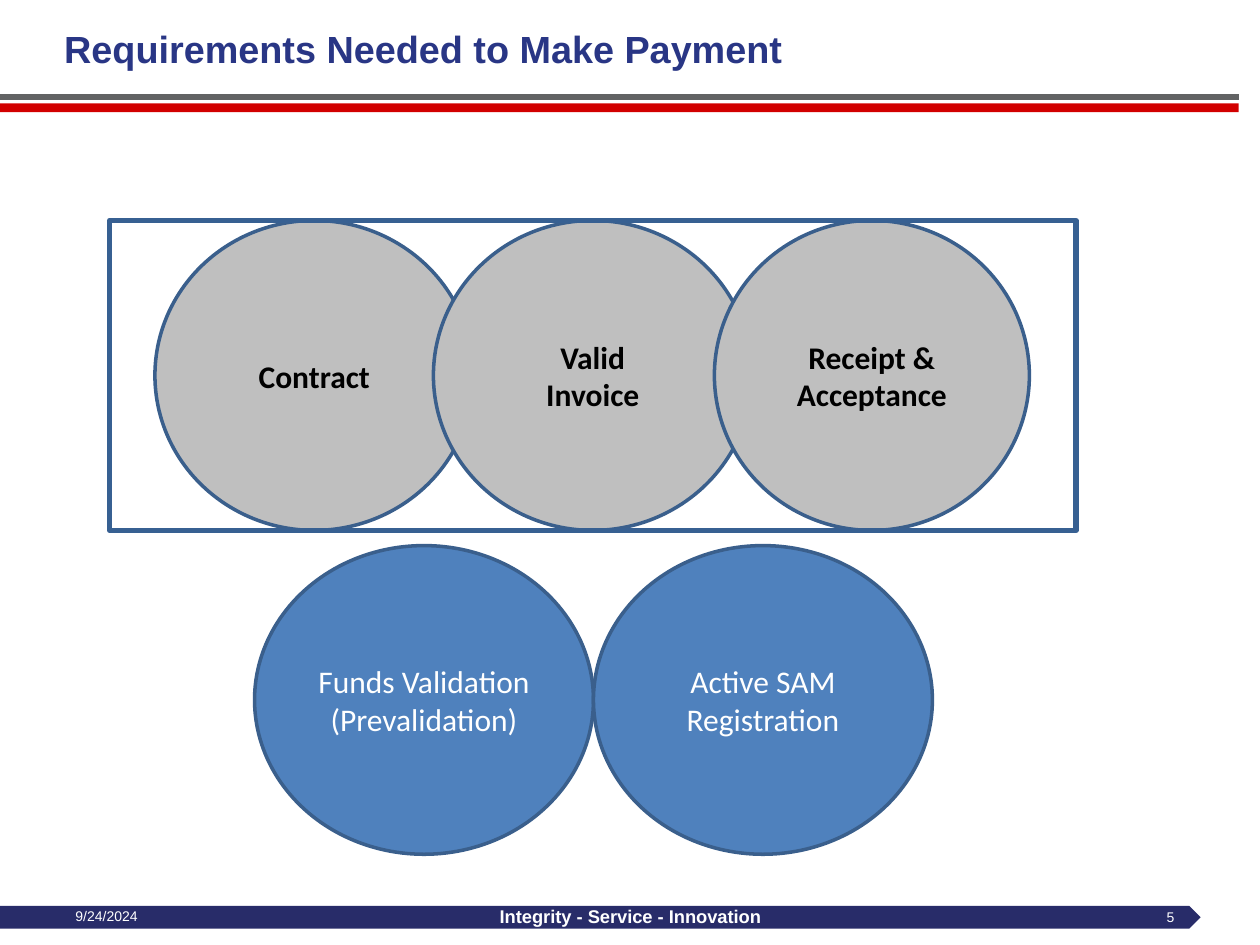
from lxml import etree
from pptx import Presentation
from pptx.dml.color import RGBColor
from pptx.enum.shapes import MSO_CONNECTOR, MSO_SHAPE as SHAPE
from pptx.enum.text import MSO_ANCHOR, PP_ALIGN as ALIGN
from pptx.oxml.ns import qn
from pptx.util import Inches, Pt

NAVY, RED, GRAY = "282C69", "D20000", "626364"
SILVER, BLUE, OUTLINE = "BFBFBF", "4F81BD", "3A5F8C"


def rgb(value):
    return RGBColor.from_string(value)


def write(s, lines, size, color, font="Arial", bold=False, align=ALIGN.LEFT):
    """Fill a shape with one paragraph per line, centred vertically."""
    tf = s.text_frame
    tf.word_wrap = True
    tf.vertical_anchor = MSO_ANCHOR.MIDDLE
    tf.text = "\n".join(lines)
    for p in tf.paragraphs:
        p.alignment = align
        p.font.name, p.font.size, p.font.bold = font, Pt(size), bold
        p.font.color.rgb = rgb(color)


def add_box(slide, kind, x, y, w, h, fill=None, line=None, width=2):
    s = slide.shapes.add_shape(kind, Inches(x), Inches(y), Inches(w), Inches(h))
    s.shadow.inherit = False
    if fill:
        s.fill.solid()
        s.fill.fore_color.rgb = rgb(fill)
    else:
        s.fill.background()
    if line:
        s.line.color.rgb = rgb(line)
        s.line.width = Pt(width)
    else:
        s.line.fill.background()
    return s


def add_text(slide, x, y, w, h, text, size, color, inset=0.1, **style):
    s = slide.shapes.add_textbox(Inches(x), Inches(y), Inches(w), Inches(h))
    tf = s.text_frame
    tf.margin_left = Inches(inset)
    tf.margin_top = tf.margin_bottom = 0
    write(s, [text], size, color, **style)


def add_rule(slide, x1, x2, y, color, width):
    s = slide.shapes.add_connector(
        MSO_CONNECTOR.STRAIGHT, Inches(x1), Inches(y), Inches(x2), Inches(y))
    s.line.color.rgb = rgb(color)
    s.line.width = Pt(width)
    etree.SubElement(s._element.spPr, qn("a:effectLst"))


def add_circle(slide, x, y, w, h, lines, fill, color, bold):
    s = add_box(slide, SHAPE.OVAL, x, y, w, h, fill, OUTLINE)
    write(s, lines, 18, color, "Calibri", bold, ALIGN.CENTER)


def add_frame(slide):
    """Header bars, title and footer."""
    add_box(slide, SHAPE.PENTAGON, 0, 7.19, 9.53, 0.18, NAVY)
    add_box(slide, SHAPE.RECTANGLE, -0.01, 0.82, 9.84, 0.07, RED)
    add_rule(slide, 0, 9.83, 0.77, GRAY, 3.25)
    add_text(slide, 0.33, 0.17, 9.33, 0.42, "Requirements Needed to Make Payment",
             21.6, "293685", inset=0.18, bold=True)
    add_text(slide, 0.5, 7.18, 2.33, 0.18, "9/24/2024", 8, "FFFFFF")
    add_text(slide, 3.42, 7.18, 3.17, 0.18, "Integrity - Service - Innovation",
             10.5, "FFFFFF", bold=True, align=ALIGN.CENTER)
    add_text(slide, 7.17, 7.19, 2.25, 0.17, "5", 8, "FFFFFF", align=ALIGN.RIGHT)


def main():
    prs = Presentation()
    prs.slide_width, prs.slide_height = Inches(10), Inches(7.5)
    slide = prs.slides.add_slide(prs.slide_layouts[6])
    add_frame(slide)

    documents = [(1.23, 2.53, ["Contract"]),
                 (3.44, 2.53, ["Valid", "Invoice"]),
                 (5.67, 2.5, ["Receipt &", "Acceptance"])]
    for x, w, lines in documents:
        add_circle(slide, x, 1.75, w, 2.46, lines, SILVER, "000000", True)

    checks = [["Funds Validation", "(Prevalidation)"],
              ["Active SAM", "Registration"]]
    for i, lines in enumerate(checks):
        add_circle(slide, 2.02 + i * 2.69, 4.33, 2.69, 2.45, lines, BLUE, "FFFFFF", False)

    add_box(slide, SHAPE.RECTANGLE, 0.87, 1.75, 7.67, 2.46, line="376092", width=3)
    prs.save("out.pptx")


if __name__ == "__main__":
    main()
